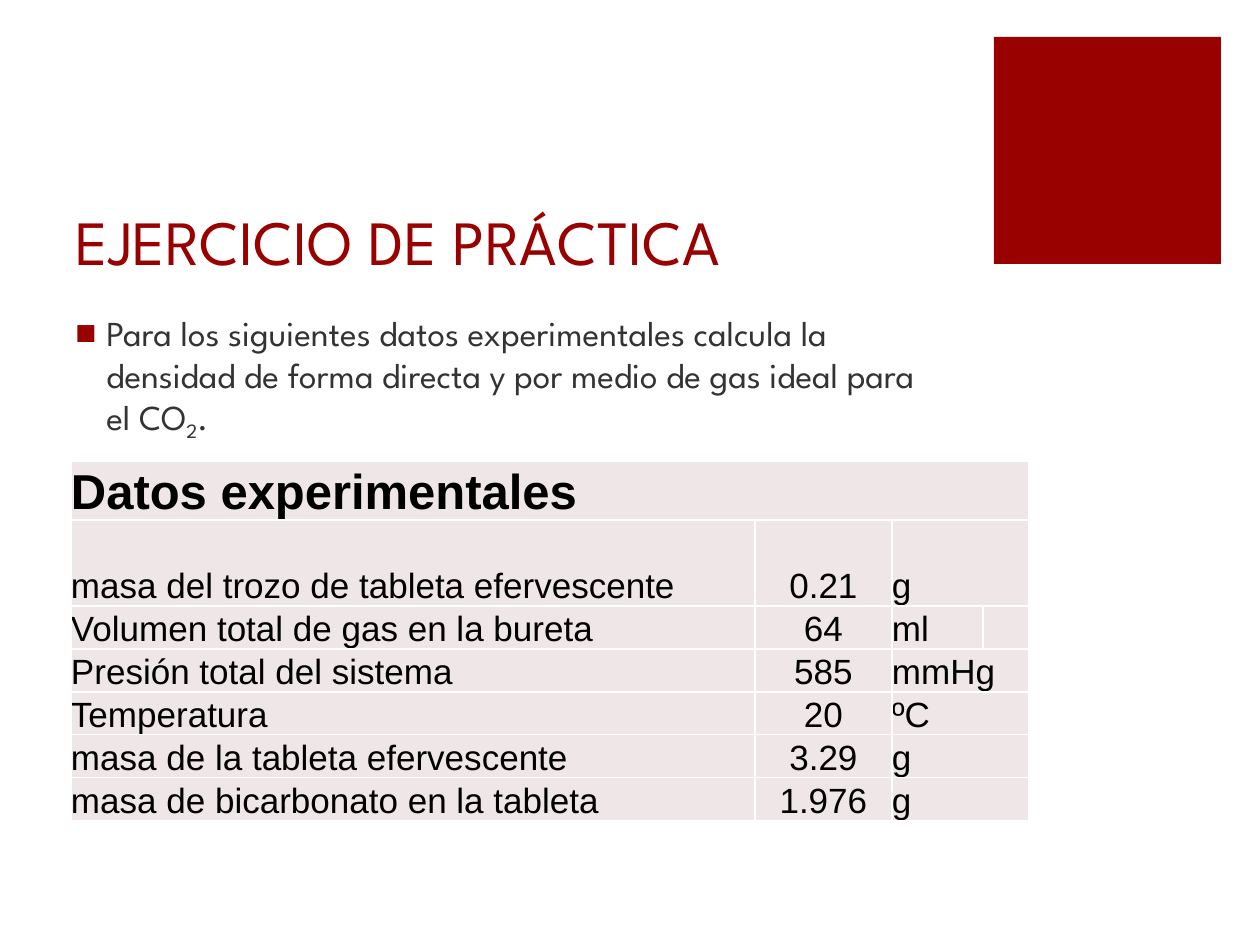
import pptx
import pptx.util
import pptx.dml.color
import pptx.enum.shapes
import pptx.enum.text
import pptx.oxml
import pptx.oxml.ns

SCALE = 914400 / 126  # EMU in one px
ANCHOR = pptx.enum.text.MSO_ANCHOR
ALIGN = pptx.enum.text.PP_ALIGN


class Theme:
    red, gray, black, cell, line = "990000", "333333", "000000", "EFE7E7", "FFFFFF"
    face, grid = "League Spartan", "Arial"
    title, head, body = 36, 28, 20


def px(n):
    return pptx.util.Emu(round(n * SCALE))


def rgb(code):
    return pptx.dml.color.RGBColor.from_string(code)


def node(text):
    """Parse one drawing element given without its namespace."""
    tag, rest = text[1:].split(" ", 1)
    return pptx.oxml.parse_xml(f"<a:{tag} {pptx.oxml.ns.nsdecls('a')} {rest}")


class Page:
    def __init__(self, deck, theme):
        self.theme = theme
        self.slide = deck.slides.add_slide(deck.slide_layouts[6])

    def font(self, para, face, size, color, bold=False):
        font = para.font
        font.name, font.size, font.bold = face, pptx.util.Pt(size), bold
        font.color.rgb = rgb(color)

    def block(self, x, y, w, h, color):
        kind = pptx.enum.shapes.MSO_SHAPE.RECTANGLE
        shape = self.slide.shapes.add_shape(kind, px(x), px(y), px(w), px(h))
        shape.shadow.inherit = False
        shape.fill.solid()
        shape.fill.fore_color.rgb = rgb(color)
        shape.line.fill.background()

    def text(self, x, y, w, h, words, size, color, anchor=ANCHOR.TOP):
        """Add a text box; words are (text, baseline) pairs."""
        frame = self.slide.shapes.add_textbox(px(x), px(y), px(w), px(h)).text_frame
        frame.word_wrap = True
        frame.vertical_anchor = anchor
        para = frame.paragraphs[0]
        for text, base in words:
            run = para.add_run()
            run.text = text
            if base:
                run.font._element.set("baseline", str(base * 1000))
        self.font(para, self.theme.face, size, color)
        return para

    def bullet(self, para, mark, color, indent):
        para.space_before = pptx.util.Pt(18)
        props = para._p.get_or_add_pPr()
        props.set("marL", str(px(indent)))
        props.set("indent", str(-px(indent)))
        last = props.find(pptx.oxml.ns.qn("a:defRPr"))
        last.addprevious(node(f'<buClr ><a:srgbClr val="{color}"/></a:buClr>'))
        last.addprevious(node('<buFont typeface="Arial"/>'))
        last.addprevious(node(f'<buChar char="{mark}"/>'))

    def cell(self, cell, text, size, bold, align):
        cell.margin_left = cell.margin_right = 0
        cell.margin_top = cell.margin_bottom = 0
        cell.vertical_anchor = ANCHOR.BOTTOM
        cell.fill.solid()
        cell.fill.fore_color.rgb = rgb(self.theme.cell)
        props = cell._tc.get_or_add_tcPr()
        for i, side in enumerate("LRTB"):
            props.insert(i, node(
                f'<ln{side} w="12700"><a:solidFill><a:srgbClr val="{self.theme.line}"/>'
                f'</a:solidFill></a:ln{side}>'))
        para = cell.text_frame.paragraphs[0]
        if text:
            para.text = text
        para.alignment = align
        self.font(para, self.theme.grid, size, self.theme.black, bold)

    def table(self, x, y, cols, rows, data, spans):
        """Add a table with a head row; spans are (row, first, last column)."""
        grid = self.slide.shapes.add_table(
            len(rows), len(cols), px(x), px(y), px(sum(cols)), px(sum(rows))).table
        for col, w in zip(grid.columns, cols):
            col.width = px(w)
        for row, h in zip(grid.rows, rows):
            row.height = px(h)
        for r, line in enumerate(data):
            size = self.theme.body if r else self.theme.head
            for c in range(len(cols)):
                text = line[c] if c < len(line) else ""
                align = ALIGN.CENTER if c == 1 else ALIGN.LEFT
                self.cell(grid.cell(r, c), text, size, r == 0, align)
        for r, first, last in spans:
            grid.cell(r, first).merge(grid.cell(r, last))


def main():
    deck = pptx.Presentation()
    deck.slide_width, deck.slide_height = px(1260), px(945)
    theme = Theme()
    page = Page(deck, theme)

    # Corner block and title
    page.block(994, 37, 227, 227, theme.red)
    page.text(63, 126, 897, 158, [("EJERCICIO DE PRÁCTICA", 0)],
              theme.title, theme.red, ANCHOR.BOTTOM)

    # Task
    task = ("Para los siguientes datos experimentales calcula la densidad "
            "de forma directa y por medio de gas ideal para el CO")
    para = page.text(63, 305, 897, 539, [(task, 0), ("2", -25), (".", 0)],
                     theme.body, theme.gray)
    page.bullet(para, "■", theme.red, 31)

    # Measured data; only the volume row keeps its last two cells apart
    data = [
        ("Datos experimentales",),
        ("masa del trozo de tableta efervescente", "0.21", "g"),
        ("Volumen total de gas en la bureta", "64", "ml"),
        ("Presión total del sistema", "585", "mmHg"),
        ("Temperatura", "20", "ºC"),
        ("masa de la tableta efervescente", "3.29", "g"),
        ("masa de bicarbonato en la tableta", "1.976", "g"),
    ]
    spans = [(0, 0, 3)] + [(r, 2, 3) for r in range(1, 7) if r != 2]
    page.table(71, 461, [684, 137, 91, 46], [57, 86] + [43] * 5, data, spans)

    deck.save("out.pptx")


if __name__ == "__main__":
    main()
